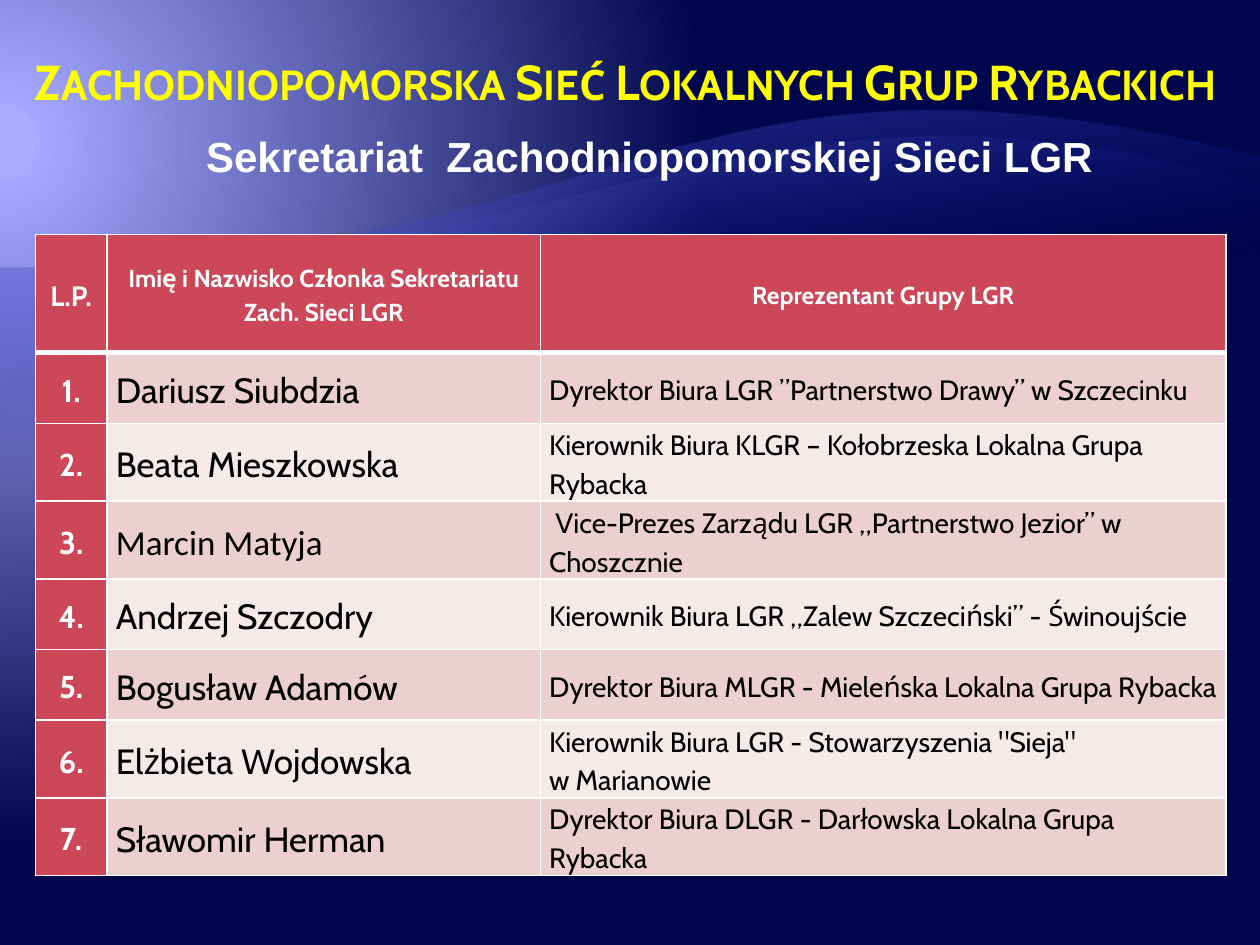
from lxml import etree
from pptx import Presentation
from pptx.dml.color import RGBColor
from pptx.enum.text import MSO_ANCHOR, MSO_AUTO_SIZE, PP_ALIGN
from pptx.oxml.ns import qn
from pptx.util import Inches, Pt

CENTER = PP_ALIGN.CENTER
LEFT = PP_ALIGN.LEFT
TOP = MSO_ANCHOR.TOP
MIDDLE = MSO_ANCHOR.MIDDLE
NO_AUTOFIT = MSO_AUTO_SIZE.NONE
TITLE_ONLY = 5

WHITE, BLACK, YELLOW = "FFFFFF", "000000", "FFFF00"
RED, PINK, PALE = "CC4757", "ECCFD1", "F6E9EA"

HEADERS = [
    ("L.P.", 16),
    ("Imię i Nazwisko Członka Sekretariatu Zach. Sieci LGR", 14),
    ("Reprezentant Grupy LGR", 14),
]
MEMBERS = [
    ("Dariusz Siubdzia", ["Dyrektor Biura LGR ”Partnerstwo Drawy” w Szczecinku"], 0),
    ("Beata Mieszkowska", ["Kierownik Biura KLGR – Kołobrzeska Lokalna Grupa Rybacka"], 6),
    ("Marcin Matyja", [" Vice-Prezes Zarządu LGR „Partnerstwo Jezior” w Choszcznie"], 0),
    ("Andrzej Szczodry", ["Kierownik Biura LGR „Zalew Szczeciński” - Świnoujście"], 0),
    ("Bogusław Adamów", ["Dyrektor Biura MLGR - Mieleńska Lokalna Grupa Rybacka"], 6),
    ("Elżbieta Wojdowska", ['Kierownik Biura LGR - Stowarzyszenia "Sieja"', "w Marianowie"], 0),
    ("Sławomir Herman", ["Dyrektor Biura DLGR - Darłowska Lokalna Grupa Rybacka"], 6),
]
TITLE_WORDS = ["ZACHODNIOPOMORSKA ", "SIEĆ ", "LOKALNYCH ", "GRUP ", "RYBACKICH"]


def color(value):
    return RGBColor.from_string(value)


def child(parent, tag, **attributes):
    element = etree.SubElement(parent, qn(tag))
    for name, value in attributes.items():
        element.set(name, str(value))
    return element


def bezier(points, steps=60):
    curve = []
    for step in range(steps + 1):
        t = step / steps
        weights = ((1 - t) ** 3, 3 * t * (1 - t) ** 2, 3 * t ** 2 * (1 - t), t ** 3)
        curve.append(tuple(sum(w * p[axis] for w, p in zip(weights, points)) for axis in (0, 1)))
    return curve


class SlideBuilder:
    font = "Cabin"

    def __init__(self, slide):
        self.slide = slide

    def gradient(self, properties, stops):
        solid = properties.find(qn("a:solidFill"))
        gradient = etree.Element(qn("a:gradFill"), rotWithShape="1")
        stop_list = child(gradient, "a:gsLst")
        for position, value, opacity in stops:
            stop = child(stop_list, "a:gs", pos=position * 1000)
            stop_color = child(stop, "a:srgbClr", val=value)
            if opacity < 100:
                child(stop_color, "a:alpha", val=opacity * 1000)
        properties.replace(solid, gradient)
        return gradient

    def background(self, stops, focus):
        self.slide.background.fill.solid()
        self.slide.background.fill.fore_color.rgb = color(WHITE)
        properties = self.slide.element.find(".//" + qn("p:bgPr"))
        circle = child(self.gradient(properties, stops), "a:path", path="circle")
        child(circle, "a:fillToRect", **{side: value * 1000 for side, value in zip("ltrb", focus)})

    def wave(self, curve, bottom, stops):
        points = bezier(curve) + [(10, bottom), (0, bottom)]
        builder = self.slide.shapes.build_freeform(
            Inches(points[0][0]), Inches(points[0][1]), scale=1.0)
        builder.add_line_segments([(Inches(x), Inches(y)) for x, y in points[1:]], close=True)
        shape = builder.convert_to_shape()
        shape.shadow.inherit = False
        shape.line.fill.background()
        shape.fill.solid()
        shape.fill.fore_color.rgb = color(WHITE)
        child(self.gradient(shape.element.spPr, stops), "a:lin", ang=260 * 60000, scaled=0)

    def run(self, paragraph, text, size, value, bold=True, font=None):
        run = paragraph.add_run()
        run.text = text
        run.font.size = Pt(size)
        run.font.name = font or self.font
        run.font.bold = bold
        run.font.color.rgb = color(value)

    def frame(self, shape):
        frame = shape.text_frame
        frame.word_wrap = True
        frame.auto_size = NO_AUTOFIT
        frame.vertical_anchor = TOP
        frame.paragraphs[0].alignment = CENTER
        return frame.paragraphs[0]

    def title(self, words, left, top, width, height):
        shape = self.slide.shapes.title
        shape.left, shape.top = Inches(left), Inches(top)
        shape.width, shape.height = Inches(width), Inches(height)
        self.slide.shapes.element.append(shape.element)
        paragraph = self.frame(shape)
        for word in words:
            self.run(paragraph, word[0], 28, YELLOW)
            self.run(paragraph, word[1:], 24, YELLOW)
        self.run(paragraph, " ", 10.5, YELLOW)

    def text(self, text, left, top, width, height):
        shape = self.slide.shapes.add_textbox(
            Inches(left), Inches(top), Inches(width), Inches(height))
        self.run(self.frame(shape), text, 24, WHITE, font="Arial")

    def table(self, left, top, columns, rows):
        table = self.slide.shapes.add_table(
            len(rows), len(columns), Inches(left), Inches(top),
            Inches(sum(columns)), Inches(sum(rows))).table
        table.first_row = table.horz_banding = False
        for column, width in zip(table.columns, columns):
            column.width = Inches(width)
        for row, height in zip(table.rows, rows):
            row.height = Inches(height)
        return table

    def cell(self, cell, lines, size, fill, borders, value=WHITE, bold=True,
             align=CENTER, font=None, space_after=0):
        cell.margin_left = cell.margin_right = Inches(0.07)
        cell.margin_top = cell.margin_bottom = 0
        cell.vertical_anchor = MIDDLE
        cell.fill.solid()
        cell.fill.fore_color.rgb = color(fill)
        properties = cell._tc.get_or_add_tcPr()
        for index, (side, width) in enumerate(zip("LRTB", borders)):
            line = etree.Element(qn("a:ln" + side), w=str(Pt(width)))
            child(child(line, "a:solidFill"), "a:srgbClr", val=WHITE)
            properties.insert(index, line)
        for index, text in enumerate(lines):
            frame = cell.text_frame
            paragraph = frame.add_paragraph() if index else frame.paragraphs[0]
            paragraph.alignment = align
            paragraph.line_spacing = 1.15
            paragraph.space_after = Pt(space_after)
            self.run(paragraph, text, size, value, bold, font)


def main():
    presentation = Presentation()
    presentation.slide_width, presentation.slide_height = Inches(10), Inches(7.5)
    builder = SlideBuilder(presentation.slides.add_slide(presentation.slide_layouts[TITLE_ONLY]))

    builder.background([(5, "A8ACFF", 100), (5, "A3A7FF", 100), (90, "00064B", 100)],
                       (20, 30, 135, 100))
    builder.wave([(0, 2.13), (5, 2.13), (5.34, 0.05), (10, 1.25)], 7.33,
                 [(65, "000D9E", 0), (100, "797FFF", 55)])
    builder.wave([(0, 2.13), (5, 2.13), (5.98, 0.31), (10, 1.47)], 6.37,
                 [(65, "000D9E", 0), (100, "A3A7FF", 30)])
    builder.title(TITLE_WORDS, -0.02, 0.36, 10, 0.74)
    builder.text("Sekretariat  Zachodniopomorskiej Sieci LGR", 0.51, 0.99, 9.29, 0.5)

    table = builder.table(0.28, 1.86, [0.57, 3.44, 5.44], [0.94] + [0.56] * len(MEMBERS))
    for column, (text, size) in enumerate(HEADERS):
        builder.cell(table.cell(0, column), [text], size, RED, (1, 1, 1, 3))
    for row, (name, role, space_after) in enumerate(MEMBERS, start=1):
        borders = (1, 1, 3 if row == 1 else 1, 1)
        fill = PINK if row % 2 else PALE
        builder.cell(table.cell(row, 0), [f"{row}."], 18, RED, borders)
        builder.cell(table.cell(row, 1), [name], 20, fill, borders, BLACK, False, LEFT,
                     font="Calibri" if name == "Marcin Matyja" else None)
        builder.cell(table.cell(row, 2), role, 16, fill, borders, BLACK, False, LEFT,
                     space_after=space_after)

    presentation.save("out.pptx")


if __name__ == "__main__":
    main()
